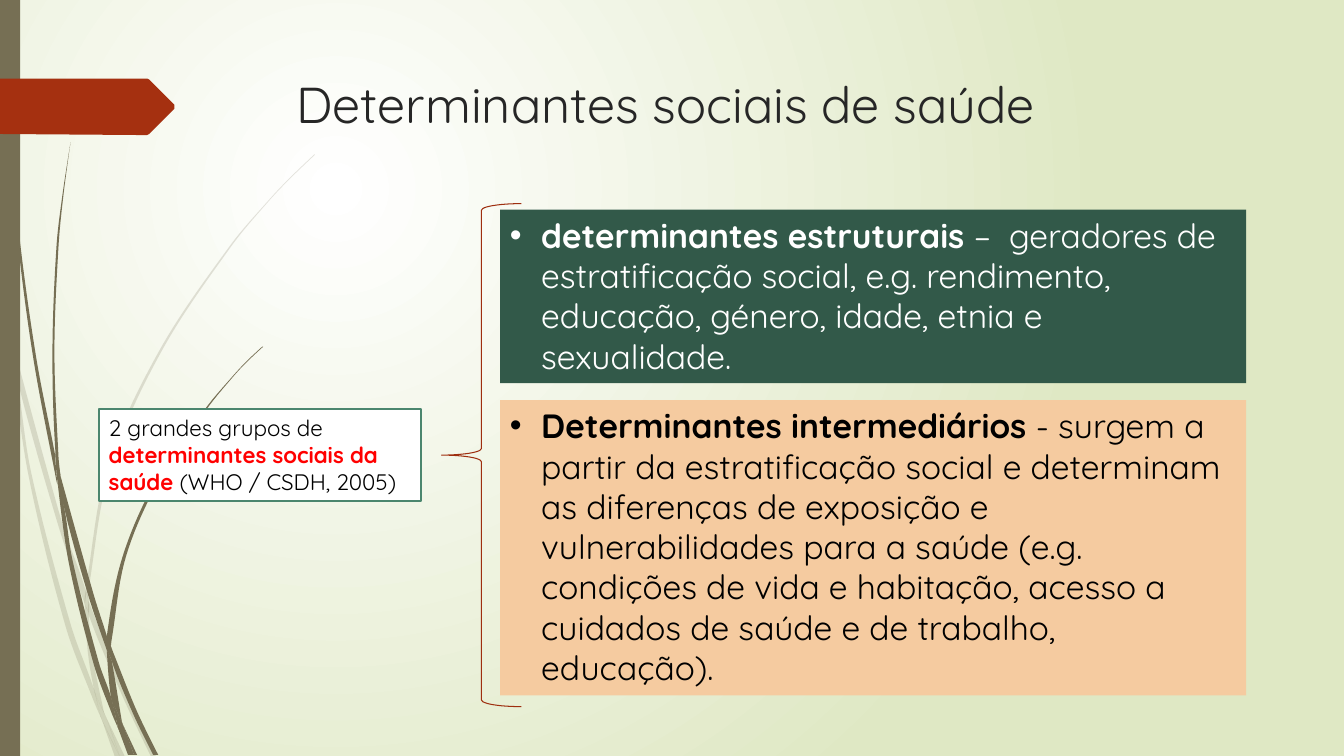
from dataclasses import dataclass
from math import dist

from lxml import etree
from pptx import Presentation
from pptx.dml.color import RGBColor
from pptx.enum.shapes import MSO_SHAPE
from pptx.enum.text import MSO_ANCHOR, MSO_AUTO_SIZE, PP_ALIGN
from pptx.oxml.ns import qn
from pptx.util import Inches, Pt

RECT, BRACE = MSO_SHAPE.RECTANGLE, MSO_SHAPE.LEFT_BRACE
TOP = MSO_ANCHOR.TOP
LEFT = PP_ALIGN.LEFT
GROW, FIXED = MSO_AUTO_SIZE.SHAPE_TO_FIT_TEXT, MSO_AUTO_SIZE.NONE

COLS, ROWS = 1333, 750
CELL = Inches(0.01)


@dataclass(frozen=True)
class Theme:
    """Colours and type sizes of the slide."""
    font: str = "Quicksand"
    title_size: int = 36
    body_size: int = 24
    note_size: int = 16
    title: str = "262626"
    black: str = "000000"
    white: str = "FFFFFF"
    red: str = "FF0000"
    stem: str = "766F54"
    marker: str = "A53010"
    brace: str = "9E2E0F"
    note_line: str = "4B866E"
    structural: str = "325949"
    intermediate: str = "F5CBA0"
    backdrop: str = "DFE8C4"


THEME = Theme()

PALE_BLADES = [
    [(11, 350), (9, 322), (0, 282), (0, 299), (10, 344)],
    [(58, 522), (84, 599), (85, 586), (62, 520), (14, 345), (17, 376)],
    [(92, 607), (88, 596), (88, 610), (123, 694), (150, 751), (155, 751), (127, 692)],
    [(119, 751), (124, 751), (105, 711)],
    [(93, 683), (70, 619), (31, 469), (17, 376), (11, 350), (28, 470), (65, 621),
     (92, 693), (101, 714), (99, 707)],
    [(84, 599), (87, 646), (93, 683), (96, 692), (105, 711), (103, 706), (91, 646),
     (88, 610), (88, 608)],
    [(88, 584), (110, 462), (160, 349), (229, 245), (268, 198), (290, 175), (312, 154),
     (312, 153), (289, 175), (268, 197), (228, 244), (158, 348), (107, 461), (85, 584),
     (85, 586), (88, 596)],
    [(101, 714), (114, 751), (119, 751)],
    [(88, 608), (88, 610), (88, 596), (85, 586), (84, 599)],
    [(96, 692), (93, 683), (99, 707), (101, 714), (119, 751), (105, 711)],
]
DARK_BLADES = [
    [(7, 110), (17, 233), (33, 355), (56, 477), (57, 481), (55, 457), (55, 453),
     (36, 355), (19, 232), (8, 109), (5, 48), (4, 0), (3, 0), (4, 48)],
    [(88, 592), (106, 645), (106, 633), (106, 631), (93, 590), (60, 472), (64, 505)],
    [(113, 649), (110, 641), (111, 656), (132, 708), (152, 749), (157, 749), (136, 706)],
    [(110, 691), (98, 657), (72, 556), (64, 505), (57, 477), (68, 557), (93, 659),
     (111, 708), (117, 722), (116, 717)],
    [(60, 472), (58, 453), (54, 349), (58, 245), (63, 193), (70, 141), (62, 193),
     (56, 245), (52, 349), (55, 449)],
    [(133, 749), (136, 749), (122, 719)],
    [(57, 477), (64, 505), (60, 472), (55, 449), (55, 453)],
    [(111, 633), (125, 552), (158, 476), (205, 406), (231, 374), (245, 359), (261, 344),
     (260, 344), (245, 358), (231, 373), (204, 405), (156, 474), (122, 551), (106, 631),
     (110, 641)],
    [(117, 722), (127, 749), (131, 749)],
    [(106, 645), (110, 691), (116, 706), (122, 719), (121, 716), (111, 656), (109, 651)],
    [(106, 645), (109, 651), (111, 656), (110, 641), (106, 631), (106, 633)],
    [(116, 706), (110, 691), (116, 717), (117, 722), (130, 749), (133, 749), (122, 719)],
]
MARKER = [(173, 108), (148, 133), (146, 134), (136, 134), (0, 133), (0, 78), (136, 78),
          (146, 78), (148, 79), (173, 104)]


def rgb(color):
    """Turn a hex string into a colour."""
    return RGBColor.from_string(color)


def paint(sp, fill=None, line=None, weight=1, alpha=None):
    """Set the fill, line and transparency of a shape without shadow."""
    sp.shadow.inherit = False
    if fill:
        sp.fill.solid()
        sp.fill.fore_color.rgb = rgb(fill)
    else:
        sp.fill.background()
    if line:
        sp.line.color.rgb = rgb(line)
        sp.line.width = Pt(weight)
    else:
        sp.line.fill.background()
    if alpha:
        color = sp.element.spPr.find(qn("a:solidFill")).find(qn("a:srgbClr"))
        etree.SubElement(color, qn("a:alpha"), val=str(alpha * 1000))


def tangent(before, knot, after):
    """Return the unit direction through a knot, or zero at a sharp corner."""
    come = [k - b for b, k in zip(before, knot)]
    go = [a - k for k, a in zip(knot, after)]
    cosine = sum(c * g for c, g in zip(come, go)) / (dist(before, knot) * dist(knot, after))
    if cosine < 0.8:
        return 0, 0
    span = dist(before, after)
    return [(a - b) / span for b, a in zip(before, after)]


def bend(sp, knots):
    """Turn the straight segments of a closed outline into smooth curves."""
    ways = [tangent(b, k, a) for b, k, a in zip(knots[-1:] + knots, knots, knots[1:] + knots[:1])]
    starts = zip(knots, ways)
    ends = zip(knots[1:] + knots[:1], ways[1:] + ways[:1])
    segments = list(sp.element.iter(qn("a:lnTo")))
    for segment, (k0, w0), (k1, w1) in zip(segments, starts, ends):
        reach = dist(k0, k1) / 3
        handles = [[k + w * reach for k, w in zip(k0, w0)],
                   [k - w * reach for k, w in zip(k1, w1)]]
        segment.tag = qn("a:cubicBezTo")
        for index, (x, y) in enumerate(handles):
            point = etree.Element(qn("a:pt"), x=str(round(x * CELL) - sp.left),
                                  y=str(round(y * CELL) - sp.top))
            segment.insert(index, point)


def add_outline(s, knots, curved=False, **style):
    """Draw a closed outline given in grid cells."""
    points = [(x * CELL, y * CELL) for x, y in knots]
    builder = s.shapes.build_freeform(*points[0])
    builder.add_line_segments(points[1:] + points[:1], close=True)
    sp = builder.convert_to_shape()
    if curved:
        bend(sp, knots)
    paint(sp, **style)


def add_preset(s, kind, cells, **style):
    """Add a preset shape at left, top, width, height in grid cells."""
    sp = s.shapes.add_shape(kind, *(n * CELL for n in cells))
    paint(sp, **style)
    return sp


def write(sp, runs, size, color, fit=GROW, bullet=False):
    """Write (text, format) runs as one paragraph of a shape."""
    tf = sp.text_frame
    tf.word_wrap = True
    tf.auto_size = fit
    tf.vertical_anchor = TOP
    p = tf.paragraphs[0]
    p.alignment = LEFT
    if bullet:
        pPr = p._p.get_or_add_pPr()
        pPr.set("marL", str(31 * CELL))
        pPr.set("indent", str(-31 * CELL))
        etree.SubElement(pPr, qn("a:buFont"), typeface="Arial")
        etree.SubElement(pPr, qn("a:buChar"), char="•")
    for text, style in runs:
        r = p.add_run()
        r.text = text
        r.font.name = THEME.font
        r.font.size = Pt(size)
        r.font.bold = style.get("bold", False)
        r.font.color.rgb = rgb(style.get("color", color))


def add_panel(s, cells, fill, color, term, definition):
    """Add a filled panel with a bold term and its definition."""
    sp = add_preset(s, RECT, cells, fill=fill)
    write(sp, [(term, {"bold": True}), (definition, {})], THEME.body_size, color, bullet=True)


def set_backdrop(s):
    """Give the slide a radial gradient that starts at the upper left."""
    fill = s.background.fill
    fill.gradient()
    for stop, color in zip(fill.gradient_stops, (THEME.white, THEME.backdrop)):
        stop.color.rgb = rgb(color)
    linear = s.element.find(".//" + qn("a:lin"))
    radial = etree.Element(qn("a:path"), path="circle")
    etree.SubElement(radial, qn("a:fillToRect"), l="50000", t="50000", r="100000", b="100000")
    linear.getparent().replace(linear, radial)


def main():
    """Build and save the slide."""
    prs = Presentation()
    prs.slide_width, prs.slide_height = COLS * CELL, ROWS * CELL
    s = prs.slides.add_slide(prs.slide_layouts[6])
    set_backdrop(s)
    for blades, alpha in ((PALE_BLADES, 20), (DARK_BLADES, None)):
        for knots in blades:
            add_outline(s, knots, curved=True, fill=THEME.stem, alpha=alpha)
    add_preset(s, RECT, (0, 0, 20, ROWS), fill=THEME.stem)
    add_outline(s, MARKER, fill=THEME.marker)

    title = s.shapes.add_textbox(*(n * CELL for n in (284, 68, 975, 140)))
    write(title, [("Determinantes sociais de saúde", {})],
          THEME.title_size, THEME.title, fit=FIXED)
    note = add_preset(s, RECT, (98, 406, 320, 91),
                      fill=THEME.white, line=THEME.note_line, weight=1.25)
    write(note, [("2 grandes grupos de ", {}),
                 ("determinantes sociais da saúde ", {"bold": True, "color": THEME.red}),
                 ("(WHO / CSDH, 2005)", {})], THEME.note_size, THEME.black)
    add_panel(s, (496, 208, 740, 172), THEME.structural, THEME.white,
              "determinantes estruturais ",
              "–  geradores de estratificação social, e.g. rendimento, educação, "
              "género, idade, etnia e sexualidade.")
    add_panel(s, (496, 397, 740, 293), THEME.intermediate, THEME.black,
              "Determinantes intermediários ",
              "- surgem a partir da estratificação social e determinam as diferenças "
              "de exposição e vulnerabilidades para a saúde (e.g. condições de vida e "
              "habitação, acesso a cuidados de saúde e de trabalho, educação).")
    add_preset(s, BRACE, (438, 202, 79, 499), line=THEME.brace, weight=0.75)
    prs.save("out.pptx")


if __name__ == "__main__":
    main()
